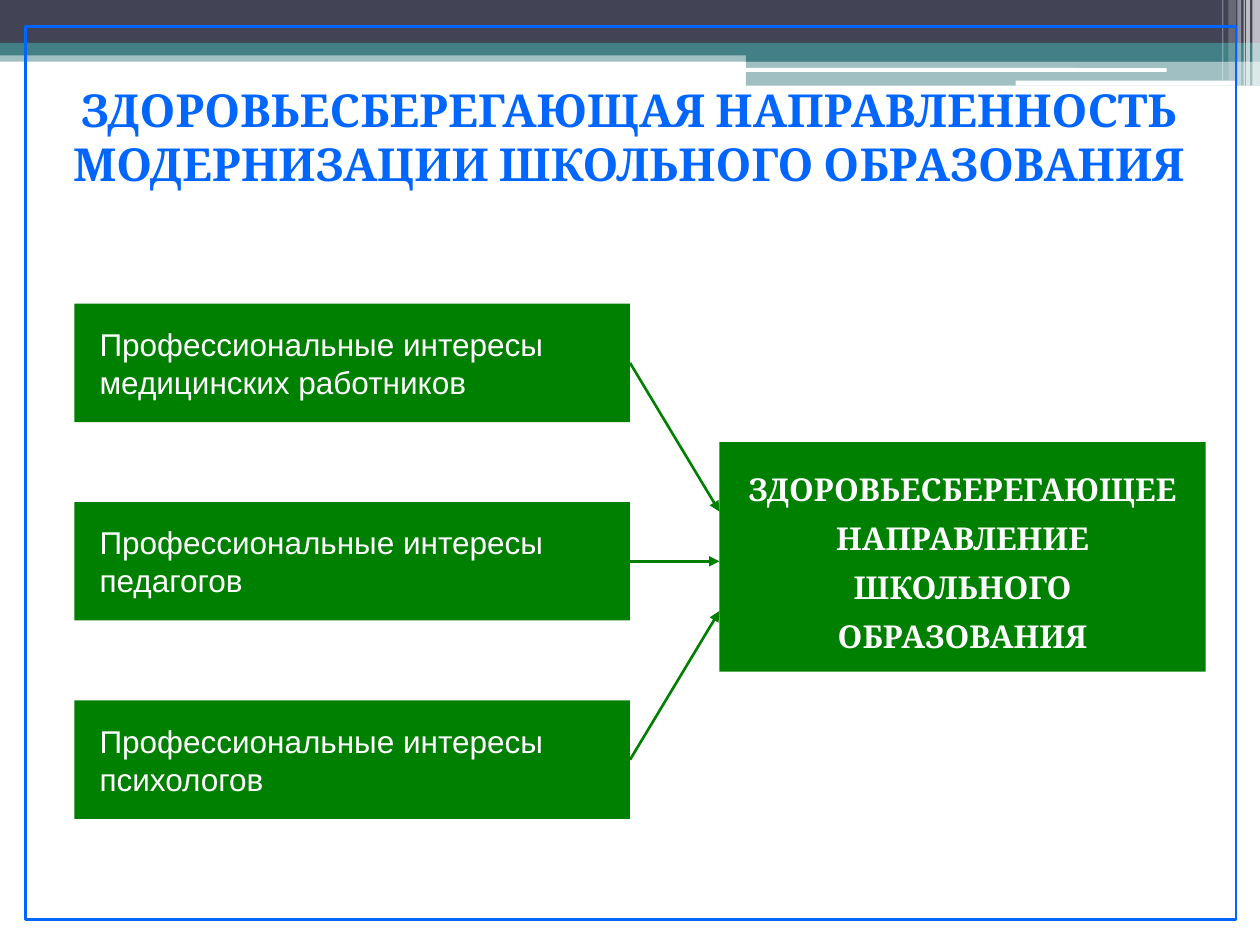
from dataclasses import dataclass

from lxml.etree import SubElement
from pptx import Presentation
from pptx.dml.color import RGBColor
from pptx.enum.shapes import MSO_CONNECTOR, MSO_SHAPE
from pptx.enum.text import MSO_ANCHOR, MSO_AUTO_SIZE, PP_ALIGN
from pptx.oxml.ns import qn
from pptx.util import Inches, Pt


@dataclass(frozen=True)
class Theme:
    blue: str = "0066FF"
    green: str = "008000"
    white: str = "FFFFFF"
    slate: str = "424456"
    teal: str = "438086"
    title_font: str = "Cambria"
    body_font: str = "Arial"
    title_size: int = 26
    body_size: int = 18
    line_width: float = 1.5


THEME = Theme()

# Content
TITLE = "ЗДОРОВЬЕСБЕРЕГАЮЩАЯ НАПРАВЛЕННОСТЬ\nМОДЕРНИЗАЦИИ ШКОЛЬНОГО ОБРАЗОВАНИЯ"
INTERESTS = [
    "Профессиональные интересы\nмедицинских работников",
    "Профессиональные интересы\nпедагогов",
    "Профессиональные интересы\nпсихологов",
]
GOAL = "ЗДОРОВЬЕСБЕРЕГАЮЩЕЕ\nНАПРАВЛЕНИЕ\nШКОЛЬНОГО\nОБРАЗОВАНИЯ"

# Header decoration: left, top, width, height, colour, opacity in percent
BANDS = [
    (0, 0.4, 10, 0.09, THEME.teal, 50),
    (0, 0, 10, 0.34, THEME.slate, 100),
    (0, 0.34, 10, 0.1, THEME.teal, 100),
    (5.92, 0.39, 4.08, 0.1, THEME.teal, 100),
    (5.92, 0.48, 4.08, 0.2, THEME.teal, 50),
]
HIGHLIGHTS = [(5.91, 0.54, 3.35, 0.03), (8.06, 0.64, 1.75, 0.04)]
# Vertical stripes: left, width, height, opacity in percent
STRIPES = [
    (9.94, 0.06, 0.68, 65),
    (9.89, 0.03, 0.68, 65),
    (9.87, 0.01, 0.68, 60),
    (9.82, 0.03, 0.68, 40),
    (9.75, 0.06, 0.64, 20),
    (9.7, 0.01, 0.64, 30),
]

# Diagram layout
INTEREST_LEFT, INTEREST_TOP, INTEREST_WIDTH, INTEREST_HEIGHT = 0.59, 2.41, 4.41, 0.94
INTEREST_STEP = 1.575
GOAL_BOX = (5.71, 3.51, 3.86, 1.82)
ARROW_SPREAD = 0.395


def add_box(slide, box, color=None, opacity=100, kind=MSO_SHAPE.RECTANGLE):
    shape = slide.shapes.add_shape(kind, *map(Inches, box))
    shape.shadow.inherit = False
    shape.line.fill.background()
    if color is None:
        shape.fill.background()
        return shape
    shape.fill.solid()
    shape.fill.fore_color.rgb = RGBColor.from_string(color)
    if opacity < 100:
        fill_color = shape.element.spPr.find(qn("a:solidFill"))[0]
        SubElement(fill_color, qn("a:alpha"), val=str(opacity * 1000))
    return shape


def write_text(shape, text, font_name, size, color, bold, alignment, anchor, margins):
    frame = shape.text_frame
    frame.word_wrap = True
    frame.auto_size = MSO_AUTO_SIZE.NONE
    frame.vertical_anchor = anchor
    frame.margin_left, frame.margin_top, frame.margin_right, frame.margin_bottom = map(
        Inches, margins
    )
    paragraph = frame.paragraphs[0]
    paragraph.text = text
    paragraph.alignment = alignment
    paragraph.font.name = font_name
    paragraph.font.size = Pt(size)
    paragraph.font.bold = bold
    paragraph.font.color.rgb = RGBColor.from_string(color)
    return paragraph


def add_arrow(slide, source, end_x, end_y):
    arrow = slide.shapes.add_connector(
        MSO_CONNECTOR.STRAIGHT, 0, 0, Inches(end_x), Inches(end_y)
    )
    arrow.begin_connect(source, 3)
    arrow.line.color.rgb = RGBColor.from_string(THEME.green)
    arrow.line.width = Pt(THEME.line_width)
    SubElement(arrow.line._get_or_add_ln(), qn("a:tailEnd"), type="triangle")
    SubElement(arrow.element.spPr, qn("a:effectLst"))


def add_header(slide):
    for *box, color, opacity in BANDS:
        add_box(slide, box, color, opacity)
    for box in HIGHLIGHTS:
        add_box(slide, box, THEME.white, kind=MSO_SHAPE.ROUNDED_RECTANGLE)
    for left, width, height, opacity in STRIPES:
        add_box(slide, (left, 0, width, height), THEME.white, opacity)


def add_frame(slide):
    frame = add_box(slide, (0.2, 0.21, 9.61, 7.09))
    frame.line.color.rgb = RGBColor.from_string(THEME.blue)
    frame.line.width = Pt(THEME.line_width)


def add_title(slide):
    title = slide.shapes.title
    title.left, title.top, title.width, title.height = map(
        Inches, (0.27, 0.6, 9.45, 0.97)
    )
    write_text(title, TITLE, THEME.title_font, THEME.title_size, THEME.blue, True,
               PP_ALIGN.CENTER, MSO_ANCHOR.TOP, (0.1, 0.05, 0.1, 0.05))


def add_diagram(slide):
    # Common goal
    goal = add_box(slide, GOAL_BOX, THEME.green)
    paragraph = write_text(goal, GOAL, THEME.title_font, THEME.body_size, THEME.white,
                           True, PP_ALIGN.CENTER, MSO_ANCHOR.TOP, (0.1, 0.13, 0.1, 0.13))
    paragraph.line_spacing = 1.3

    # Interests, each with an arrow to the goal
    middle = len(INTERESTS) // 2
    middle_y = INTEREST_TOP + middle * INTEREST_STEP + INTEREST_HEIGHT / 2
    for index, text in enumerate(INTERESTS):
        top = INTEREST_TOP + index * INTEREST_STEP
        interest = add_box(
            slide, (INTEREST_LEFT, top, INTEREST_WIDTH, INTEREST_HEIGHT), THEME.green
        )
        write_text(interest, text, THEME.body_font, THEME.body_size, THEME.white, False,
                   PP_ALIGN.LEFT, MSO_ANCHOR.MIDDLE, (0.2, 0.13, 0.1, 0.13))
        add_arrow(slide, interest, GOAL_BOX[0], middle_y + (index - middle) * ARROW_SPREAD)


def main():
    presentation = Presentation()
    presentation.slide_width, presentation.slide_height = Inches(10), Inches(7.5)
    slide = presentation.slides.add_slide(presentation.slide_layouts[5])
    add_header(slide)
    add_frame(slide)
    add_title(slide)
    add_diagram(slide)
    presentation.save("out.pptx")


if __name__ == "__main__":
    main()
